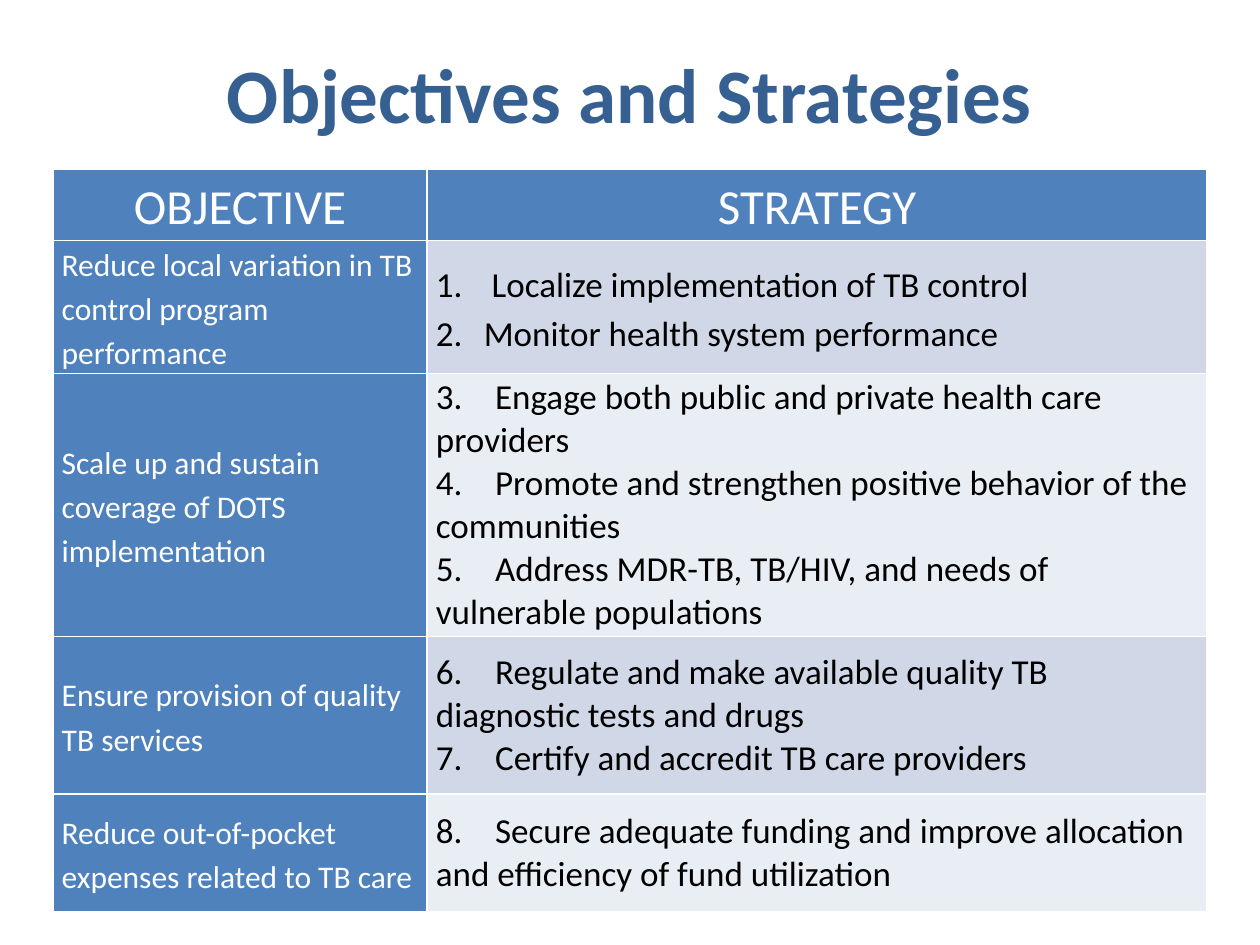
import pptx
import pptx.util
import pptx.dml.color
import pptx.enum.text
import pptx.oxml.ns
from lxml import etree

Inches, Pt = pptx.util.Inches, pptx.util.Pt
ALIGN, ANCHOR = pptx.enum.text.PP_ALIGN, pptx.enum.text.MSO_ANCHOR
FONT = "Calibri"
WHITE, BLACK, BLUE, TITLE_BLUE = "FFFFFF", "000000", "4F81BD", "376092"
BANDS = ["D0D8E8", "E9EDF4"]
COL_WIDTHS = [2.97, 6.19]
ROW_HEIGHTS = [0.57, 1.05, 2.09, 1.25, 0.93]

ROWS = [
    ("Reduce local variation in TB control program performance",
     [" Localize implementation of TB control",
      "Monitor health system performance"]),
    ("Scale up and sustain coverage of DOTS implementation",
     ["3.\tEngage both public and private health care providers",
      "4.\tPromote and strengthen positive behavior of the communities",
      "5.\tAddress MDR-TB, TB/HIV, and needs of vulnerable populations"]),
    ("Ensure provision of quality TB services",
     ["6.\tRegulate and make available quality TB diagnostic tests and drugs",
      "7.\tCertify and accredit TB care providers"]),
    ("Reduce out-of-pocket expenses related to TB care",
     ["8.\tSecure adequate funding and improve allocation and efficiency "
      "of fund utilization"]),
]


def rgb(color):
    return pptx.dml.color.RGBColor.from_string(color)


def add_xml(parent, tag, **attrs):
    return etree.SubElement(parent, pptx.oxml.ns.qn(tag),
                            {k: str(v) for k, v in attrs.items()})


def format_paragraph(p, size, color, bold=False, align=ALIGN.LEFT, spacing=None):
    p.alignment = align
    if spacing:
        p.line_spacing = spacing
    for r in p.runs:
        r.font.name, r.font.size, r.font.bold = FONT, Pt(size), bold
        r.font.color.rgb = rgb(color)


def add_borders(cell):
    tcPr = cell._tc.get_or_add_tcPr()
    for tag in ("a:lnL", "a:lnR", "a:lnT", "a:lnB"):
        ln = add_xml(tcPr, tag, w=Pt(1))
        add_xml(add_xml(ln, "a:solidFill"), "a:srgbClr", val=WHITE)


def fill_cell(cell, lines, fill, size, color, anchor=ANCHOR.MIDDLE, **style):
    add_borders(cell)
    cell.fill.solid()
    cell.fill.fore_color.rgb = rgb(fill)
    cell.margin_left = cell.margin_right = Inches(0.07)
    cell.margin_top = cell.margin_bottom = 0
    cell.vertical_anchor = anchor
    tf = cell.text_frame
    tf.text = "\n".join(lines)
    for p in tf.paragraphs:
        format_paragraph(p, size, color, **style)


def number_paragraph(p):
    pPr = p._p.get_or_add_pPr()
    pPr.set("marL", str(Inches(0.38)))
    pPr.set("indent", str(-Inches(0.38)))
    add_xml(pPr, "a:buFont", typeface="+mj-lt")
    add_xml(pPr, "a:buAutoNum", type="arabicPeriod")


def add_tab_stop(p):
    tabs = add_xml(p._p.get_or_add_pPr(), "a:tabLst")
    add_xml(tabs, "a:tab", pos=Inches(0.47), algn="l")


def add_title(s, text):
    title = s.shapes.title
    title.left, title.top = Inches(0.5), Inches(0.11)
    title.width, title.height = Inches(9), Inches(1.25)
    tf = title.text_frame
    tf.text = text
    tf.vertical_anchor = ANCHOR.MIDDLE
    format_paragraph(tf.paragraphs[0], 44, TITLE_BLUE, True, ALIGN.CENTER)


def add_strategy_table(s):
    table = s.shapes.add_table(
        len(ROW_HEIGHTS), len(COL_WIDTHS), Inches(0.42), Inches(1.34),
        Inches(sum(COL_WIDTHS)), Inches(sum(ROW_HEIGHTS))).table
    for col, width in zip(table.columns, COL_WIDTHS):
        col.width = Inches(width)
    for row, height in zip(table.rows, ROW_HEIGHTS):
        row.height = Inches(height)

    # Header row
    for c, heading in enumerate(("OBJECTIVE", "STRATEGY")):
        fill_cell(table.cell(0, c), [heading], BLUE, 28, WHITE, ANCHOR.TOP,
                  align=ALIGN.CENTER, spacing=1.15)

    # One objective with its strategies per row
    for i, (objective, strategies) in enumerate(ROWS):
        fill_cell(table.cell(i + 1, 0), [objective], BLUE, 18, WHITE, spacing=1.15)
        cell = table.cell(i + 1, 1)
        fill_cell(cell, strategies, BANDS[i % 2], 20, BLACK,
                  spacing=1.15 if i == 0 else None)
        for p in cell.text_frame.paragraphs:
            if i == 0:
                number_paragraph(p)
            else:
                add_tab_stop(p)


def main():
    prs = pptx.Presentation()
    prs.slide_width, prs.slide_height = Inches(10), Inches(7.5)
    s = prs.slides.add_slide(prs.slide_layouts[5])
    s.background.fill.solid()
    s.background.fill.fore_color.rgb = rgb(WHITE)
    add_strategy_table(s)
    add_title(s, "Objectives and Strategies")
    prs.save("out.pptx")


main()
